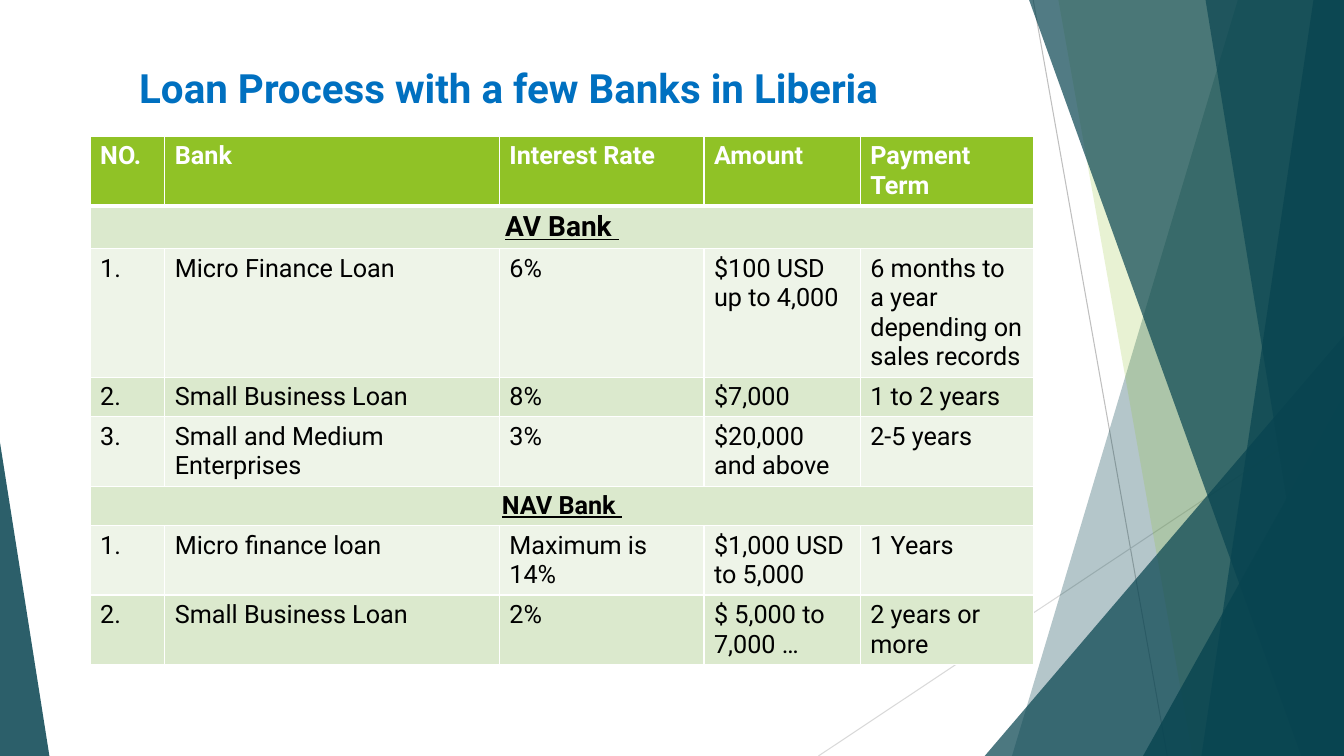
from lxml.etree import SubElement
from pptx import Presentation
from pptx.dml.color import RGBColor
from pptx.enum.shapes import MSO_CONNECTOR as Connector, MSO_SHAPE as Shape
from pptx.enum.text import MSO_ANCHOR as Anchor, PP_ALIGN as Align
from pptx.oxml.ns import qn
from pptx.util import Pt

WHITE = RGBColor(0xFF, 0xFF, 0xFF)
BLACK = RGBColor(0, 0, 0)
BLUE = RGBColor(0x00, 0x70, 0xC0)
GREEN = RGBColor(0x90, 0xC2, 0x26)
TEAL = RGBColor(0x08, 0x44, 0x50)
MID_GREY = RGBColor(0xBF, 0xBF, 0xBF)
LIGHT_GREY = RGBColor(0xD9, 0xD9, 0xD9)
DARK_BAND = RGBColor(0xDB, 0xE9, 0xCD)
LIGHT_BAND = RGBColor(0xEE, 0xF4, 0xE8)

WIDTH, HEIGHT = 960, 540

COLUMN_WIDTHS = [53.3, 239, 146.2, 111.6, 123.9]
ROW_HEIGHTS = [47.5, 29.5, 87.8, 26.6, 47.5, 26.6, 47.5, 47.5]
LOANS = [
    ["NO.", "Bank", "Interest Rate", "Amount", "Payment Term"],
    ["AV Bank "],
    ["1.", "Micro Finance Loan", "6%", "$100 USD up to 4,000",
     "6 months to a year depending on sales records"],
    ["2.", "Small Business Loan", "8%", "$7,000", "1 to 2 years"],
    ["3.", "Small and Medium Enterprises", "3%", "$20,000 and above", "2-5 years"],
    ["NAV Bank "],
    ["1.", "Micro finance loan", "Maximum is 14%", "$1,000 USD to 5,000", "1 Years"],
    ["2.", "Small Business Loan", "2%", "$ 5,000 to 7,000 …", "2 years or more"],
]


class LoanSlide:
    font = "Roboto"

    def __init__(self, deck):
        self.slide = deck.slides.add_slide(deck.slide_layouts[5])
        self.shapes = self.slide.shapes

    def style(self, paragraph, size, colour, bold=False, underline=False, align=Align.LEFT):
        paragraph.alignment = align
        font = paragraph.font
        font.name, font.size = self.font, Pt(size)
        font.bold, font.underline = bold, underline
        font.color.rgb = colour

    def title(self, text, left, top, width, height):
        heading = self.shapes.title
        heading.left, heading.top = Pt(left), Pt(top)
        heading.width, heading.height = Pt(width), Pt(height)
        frame = heading.text_frame
        frame.text = text
        frame.word_wrap = True
        frame.vertical_anchor = Anchor.MIDDLE
        self.style(frame.paragraphs[0], 28.8, BLUE, bold=True)

    def line(self, start, end, colour):
        ray = self.shapes.add_connector(Connector.STRAIGHT, *map(Pt, start + end))
        ray.line.color.rgb = colour
        ray.line.width = Pt(0.75)
        SubElement(ray._element.spPr, qn("a:effectLst"))

    def tint(self, facet, colour, opacity):
        facet.shadow.inherit = False
        facet.line.fill.background()
        facet.fill.solid()
        facet.fill.fore_color.rgb = colour
        fill_colour = facet._element.spPr.find(qn("a:solidFill"))[0]
        SubElement(fill_colour, qn("a:alpha"), val=str(opacity * 1000))

    def band(self, top_x, bottom_x, opacity, colour=TEAL):
        outline = self.shapes.build_freeform(Pt(top_x), 0)
        corners = [(WIDTH, 0), (WIDTH, HEIGHT), (bottom_x, HEIGHT)]
        outline.add_line_segments([(Pt(x), Pt(y)) for x, y in corners])
        self.tint(outline.convert_to_shape(), colour, opacity)

    def triangle(self, left, top, width, apex, opacity):
        facet = self.shapes.add_shape(Shape.ISOSCELES_TRIANGLE, Pt(left), Pt(top),
                                      Pt(width), Pt(HEIGHT - top))
        facet.adjustments[0] = apex
        self.tint(facet, TEAL, opacity)

    def cell(self, cell, text, fill, bottom_border=1, **text_style):
        cell.text = text
        self.style(cell.text_frame.paragraphs[0], **text_style)
        properties = cell._tc.get_or_add_tcPr()
        for side, width in zip("LRTB", (1, 1, 1, bottom_border)):
            border = SubElement(properties, qn(f"a:ln{side}"), w=str(Pt(width)))
            paint = SubElement(border, qn("a:solidFill"))
            SubElement(paint, qn("a:srgbClr"), val=str(WHITE))
        cell.fill.solid()
        cell.fill.fore_color.rgb = fill

    def table(self, rows, left, top):
        grid = self.shapes.add_table(len(rows), len(COLUMN_WIDTHS), Pt(left), Pt(top),
                                     Pt(sum(COLUMN_WIDTHS)), Pt(sum(ROW_HEIGHTS))).table
        for column, width in zip(grid.columns, COLUMN_WIDTHS):
            column.width = Pt(width)
        for index, (texts, height) in enumerate(zip(rows, ROW_HEIGHTS)):
            grid.rows[index].height = Pt(height)
            look = dict(fill=DARK_BAND if index % 2 else LIGHT_BAND, size=18, colour=BLACK)
            if index == 0:
                look.update(fill=GREEN, colour=WHITE, bold=True, bottom_border=3)
            if len(texts) == 1:
                grid.cell(index, 0).merge(grid.cell(index, len(COLUMN_WIDTHS) - 1))
                look.update(size=20 if index == 1 else 18, bold=True, underline=True,
                            align=Align.CENTER)
            for position, text in enumerate(texts):
                self.cell(grid.cell(index, position), text, **look)


def main():
    deck = Presentation()
    deck.slide_width, deck.slide_height = Pt(WIDTH), Pt(HEIGHT)
    page = LoanSlide(deck)
    page.line((738, 0), (833.8, HEIGHT), MID_GREY)
    page.line((WIDTH, 290.2), (584.6, HEIGHT), LIGHT_GREY)
    page.band(884.2, 722.9, 30)
    page.band(756, 851.8, 20, GREEN)
    page.triangle(703.4, 239.8, 256.6, 1, 72)
    page.band(735.1, 929.5, 70)
    page.band(938.2, 858.2, 70)
    page.band(861.1, 949, 65)
    page.triangle(816.5, 283, 143.5, 1, 80)
    page.triangle(0, 316.1, 35.3, 0, 85)
    page.title("Loan Process with a few Banks in Liberia", 92.2, 41, 599, 42.5)
    page.table(LOANS, 64.4, 97.5)
    deck.save("out.pptx")


if __name__ == "__main__":
    main()
